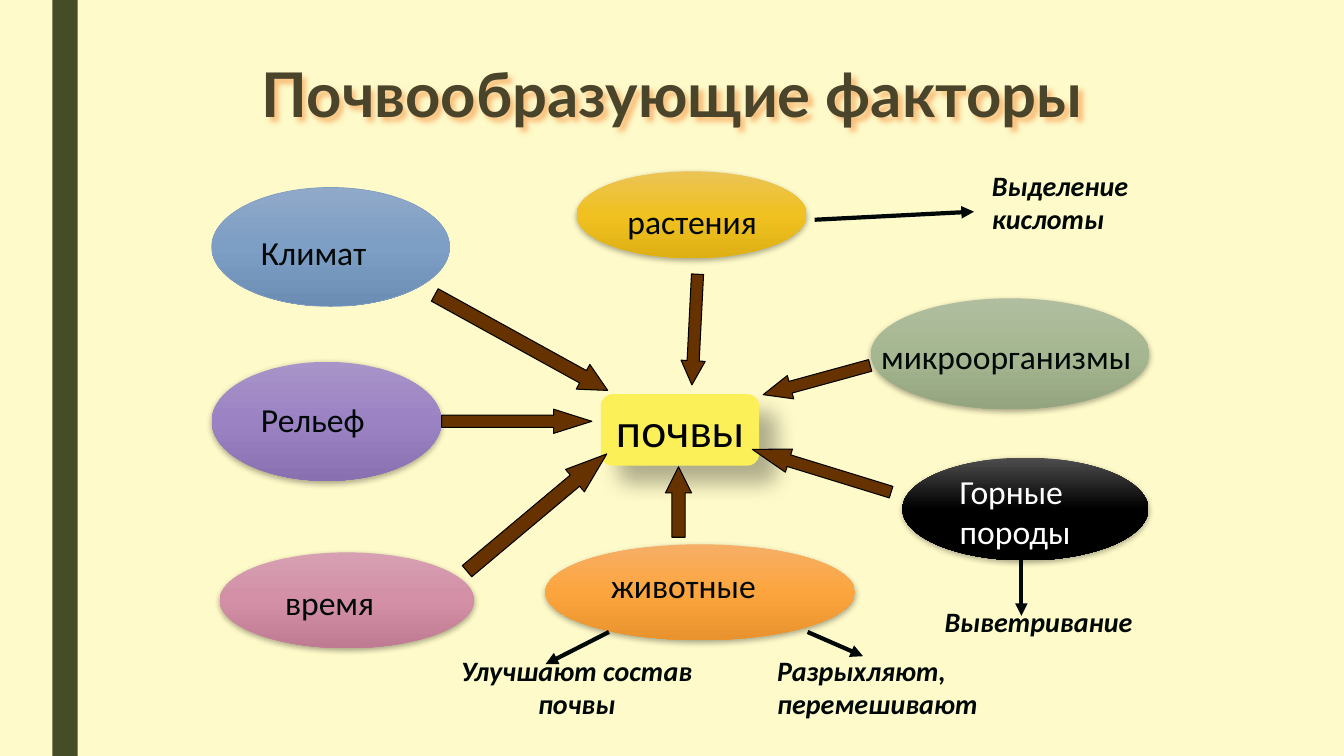
from pptx import Presentation
from pptx.dml.color import RGBColor
from pptx.enum.shapes import MSO_CONNECTOR, MSO_SHAPE
from pptx.enum.text import MSO_ANCHOR, PP_ALIGN
from pptx.oxml import parse_xml
from pptx.oxml.ns import nsdecls, qn
from pptx.util import Inches, Pt

LEFT, CENTER = PP_ALIGN.LEFT, PP_ALIGN.CENTER
MIDDLE = MSO_ANCHOR.MIDDLE
RECTANGLE, ROUNDED = MSO_SHAPE.RECTANGLE, MSO_SHAPE.ROUNDED_RECTANGLE
OVAL, RIGHT_ARROW = MSO_SHAPE.OVAL, MSO_SHAPE.RIGHT_ARROW
STRAIGHT = MSO_CONNECTOR.STRAIGHT

CREAM = RGBColor(0xFE, 0xFA, 0xC9)
OLIVE = RGBColor(0x44, 0x4D, 0x26)
YELLOW = RGBColor(0xFC, 0xF0, 0x59)
BROWN = RGBColor(0x66, 0x33, 0x00)
TITLE_BROWN = RGBColor(0x4A, 0x45, 0x2A)
GLOW = RGBColor(0xF7, 0x96, 0x46)
INK = RGBColor(0x00, 0x08, 0x08)
BLACK = RGBColor(0x00, 0x00, 0x00)
WHITE = RGBColor(0xFF, 0xFF, 0xFF)
BLUE_EDGE = RGBColor(0x80, 0x9E, 0xC2)


def gradient(*codes):
    """Return the top, middle and bottom colours of a gradient."""
    return [RGBColor.from_string(code) for code in codes]


BLUE = gradient("90A9C9", "7D9EC5", "6B8CB3")
GOLD = gradient("EBC456", "F0C120", "DEB014")
VIOLET = gradient("A894C8", "9B82C3", "8970B1")
GREEN = gradient("B0BE9F", "A5B790", "93A47E")
PINK = gradient("D6A0B2", "D38FA6", "BF7B92")
COAL = gradient("4D4D4D", "000000", "000000")
ORANGE = gradient("F6AF66", "FCA53E", "E9932E")

FACTORS = [
    ("Климат", (2.1, 1.86, 2.36, 1.18), BLUE, (2.49, 2.25, 1.65, 0.51), INK, LEFT),
    ("растения", (5.72, 1.7, 2.28, 0.86), GOLD, (5.88, 1.94, 1.97, 0.5), INK, CENTER),
    ("Рельеф", (2.1, 3.59, 2.28, 1.18), VIOLET, (2.49, 3.91, 1.73, 0.51), INK, LEFT),
    ("микроорганизмы", (8.64, 2.96, 2.76, 1.1), GREEN, (8.64, 3.28, 2.8, 0.5), INK, LEFT),
    ("время", (2.18, 5.48, 2.52, 0.95), PINK, (2.73, 5.72, 1.58, 0.5), INK, LEFT),
    ("Горные породы", (8.95, 4.54, 2.44, 1.02), COAL, (9.42, 4.62, 1.81, 0.91), WHITE, LEFT),
    ("животные", (5.41, 5.4, 3.07, 0.95), ORANGE, (5.96, 5.56, 2.05, 0.5), INK, LEFT),
]
EFFECTS = [
    ("Выделение кислоты", (9.74, 1.62, 2.09, 0.77), LEFT),
    ("Выветривание", (9.27, 5.95, 2.4, 0.43), LEFT),
    ("Улучшают состав почвы", (4.46, 6.43, 2.52, 0.77), CENTER),
    ("Разрыхляют, перемешивают", (7.61, 6.43, 2.44, 0.77), LEFT),
]
BLOCK_ARROWS = [
    ((4.19, 3.26, 1.96, 0.28), 28.9, 1),
    ((6.34, 3.15, 1.1, 0.24), 92.9, 1),
    ((7.55, 3.65, 1.1, 0.24), 164.7, 1.17),
    ((7.43, 4.55, 1.44, 0.24), 197.1, 1.58),
    ((6.38, 4.85, 0.7, 0.26), 270, 1),
    ((4.42, 4.94, 1.81, 0.29), 320, 1.42),
    ((4.38, 4.06, 1.49, 0.24), 0, 1.58),
]
THIN_ARROWS = [
    (8.08, 2.18, 9.66, 2.1),
    (10.13, 5.56, 10.13, 6.11),
    (6.04, 6.27, 5.41, 6.59),
    (8.01, 6.27, 8.56, 6.51),
]


def inches(values):
    """Convert a sequence of numbers to lengths."""
    return [Inches(value) for value in values]


def add_shadow(shape, color, opacity, blur, distance, angle):
    """Give a shape a soft outer shadow."""
    shape.shadow.inherit = False
    shape._element.spPr.find(qn("a:effectLst")).append(parse_xml(
        f'<a:outerShdw {nsdecls("a")} blurRad="{Pt(blur)}" dist="{Pt(distance)}" '
        f'dir="{angle * 60000}" algn="ctr" rotWithShape="0"><a:srgbClr val="{color}">'
        f'<a:alpha val="{opacity * 1000}"/></a:srgbClr></a:outerShdw>'))


def add_filled(slide, kind, box, color):
    """Add a preset shape with a plain fill, no line and no shadow."""
    shape = slide.shapes.add_shape(kind, *inches(box))
    shape.shadow.inherit = False
    shape.fill.solid()
    shape.fill.fore_color.rgb = color
    shape.line.fill.background()
    return shape


def write(shape, text, font_name, size, color, alignment=LEFT, strong=False, slanted=False):
    """Put one formatted paragraph into a shape."""
    shape.text_frame.word_wrap = True
    shape.text_frame.text = text
    paragraph = shape.text_frame.paragraphs[0]
    paragraph.alignment = alignment
    font = paragraph.font
    font.name, font.size = font_name, Pt(size)
    font.bold, font.italic = strong, slanted
    font.color.rgb = color


def add_title(slide):
    """Place and format the title."""
    title = slide.shapes.title
    title.left, title.top, title.width, title.height = inches((2.17, 0.3, 9, 1.25))
    write(title, "Почвообразующие факторы", "Lato", 44, TITLE_BROWN, CENTER, True)
    title.text_frame.vertical_anchor = MIDDLE
    add_shadow(title, GLOW, 60, 4, 3, 45)


def add_ellipse(slide, box, colors):
    """Add an ellipse with a vertical three-colour gradient."""
    ellipse = slide.shapes.add_shape(OVAL, *inches(box))
    ellipse.fill.gradient()
    ellipse.fill.gradient_angle = 270
    stops = ellipse._element.spPr.find(".//" + qn("a:gsLst"))
    stops.clear()
    for index, color in enumerate(colors):
        stops.append(parse_xml(
            f'<a:gs {nsdecls("a")} pos="{index * 50000}"><a:srgbClr val="{color}"/></a:gs>'))
    if colors is BLUE:
        ellipse.shadow.inherit = False
        ellipse.line.color.rgb = BLUE_EDGE
        ellipse.line.width = Pt(0.5)
    else:
        ellipse.line.fill.background()
        add_shadow(ellipse, BLACK, 35, 4.5, 1.5, 90)


def add_label(slide, text, box, size, color, alignment, emphasis=False):
    """Add a text box label."""
    label = slide.shapes.add_textbox(*inches(box))
    write(label, text, "Calibri", size, color, alignment, emphasis, emphasis)


def add_block_arrow(slide, box, rotation, head):
    """Add a brown block arrow turned towards the centre."""
    arrow = add_filled(slide, RIGHT_ARROW, box, BROWN)
    arrow.rotation = rotation
    arrow.adjustments[1] = head
    arrow.line.color.rgb = BLACK
    arrow.line.width = Pt(0.75)


def add_thin_arrow(slide, ends):
    """Add a straight line with an arrowhead at its end."""
    connector = slide.shapes.add_connector(STRAIGHT, *inches(ends))
    connector.line.color.rgb = INK
    connector.line.width = Pt(3)
    connector.line._get_or_add_ln().append(
        parse_xml(f'<a:tailEnd {nsdecls("a")} type="triangle"/>'))
    connector._element.spPr.append(parse_xml(f'<a:effectLst {nsdecls("a")}/>'))


def main():
    """Build the slide and save it."""
    presentation = Presentation()
    presentation.slide_width, presentation.slide_height = inches((13.33, 7.5))
    slide = presentation.slides.add_slide(presentation.slide_layouts[5])
    slide.background.fill.solid()
    slide.background.fill.fore_color.rgb = CREAM
    add_filled(slide, RECTANGLE, (0.52, 0, 0.25, 7.5), OLIVE)
    add_title(slide)
    soil = add_filled(slide, ROUNDED, (5.96, 3.91, 1.57, 0.71), YELLOW)
    add_shadow(soil, BLACK, 30, 15, 18, 45)
    write(soil, "почвы", "Lato", 32, BLACK, CENTER)
    for text, box, colors, label_box, color, alignment in FACTORS:
        add_ellipse(slide, box, colors)
        add_label(slide, text, label_box, 24, color, alignment)
    for text, box, alignment in EFFECTS:
        add_label(slide, text, box, 20, INK, alignment, True)
    for box, rotation, head in BLOCK_ARROWS:
        add_block_arrow(slide, box, rotation, head)
    for ends in THIN_ARROWS:
        add_thin_arrow(slide, ends)
    presentation.save("out.pptx")


if __name__ == "__main__":
    main()
